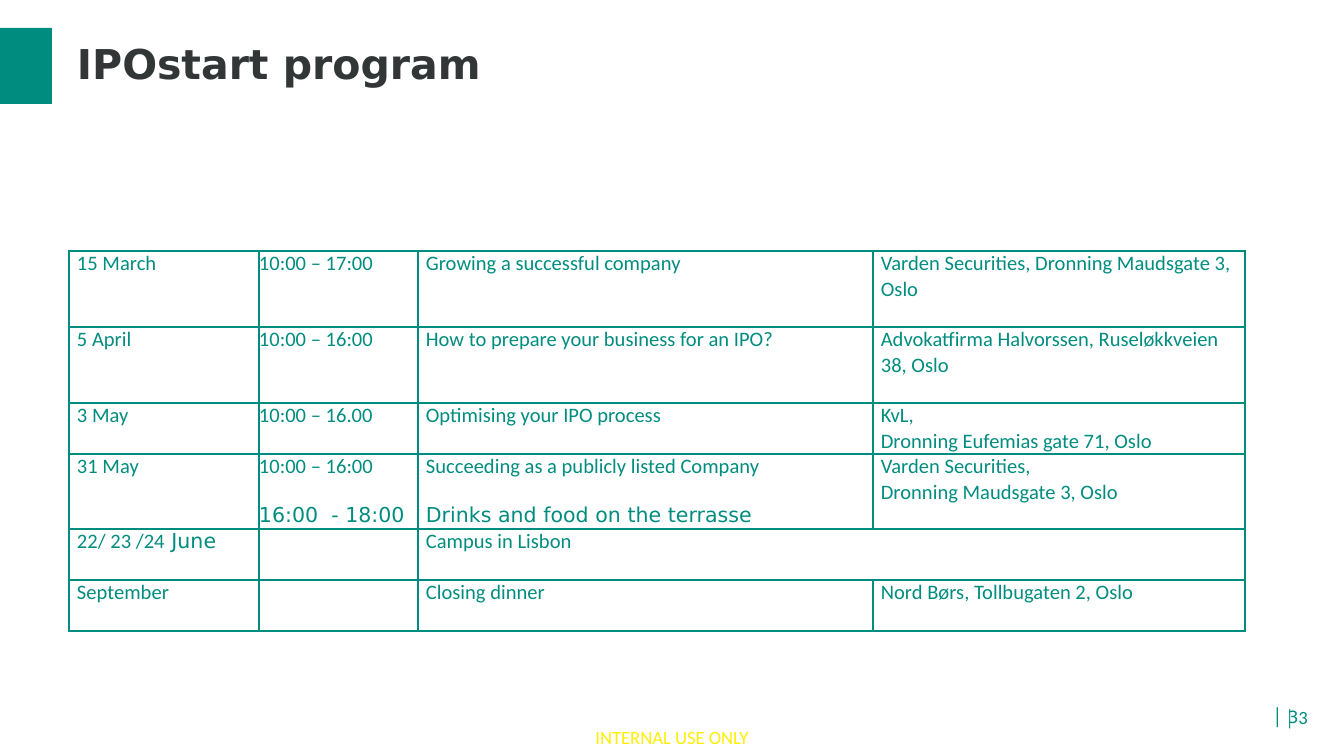
from lxml import etree
from pptx import Presentation
from pptx import util as u
from pptx.dml.color import RGBColor
from pptx.enum import shapes, text
from pptx.oxml.ns import qn

HUES = {"teal": "008D7F", "dark": "323637", "yellow": "FFEF00"}
SANS, WIDE = "Calibri", "DejaVu Sans"


def px(*sizes):
    return [u.Emu(round(n * 914400 / 134.4)) for n in sizes]


def style(font, size, face, hue, bold=False):
    font.size, font.name, font.bold = u.Pt(size), face, bold
    font.color.rgb = RGBColor.from_string(HUES[hue])


prs = Presentation()
prs.slide_width, prs.slide_height = px(1344, 756)
slide = prs.slides.add_slide(prs.slide_layouts[5])

notes = [
    ((1251, 707, 69, 20), "│ 3", 9, WIDE, "teal"),
    ((572, 718, 200, 39), "INTERNAL USE ONLY", 10, SANS, "yellow"),
    ((1262, 706, 69, 23), "│ 3", 10, SANS, "teal"),
]
for area, words, size, face, hue in notes:
    frame = slide.shapes.add_textbox(*px(*area)).text_frame
    frame.word_wrap = True
    frame.margin_left = frame.margin_right = 0
    frame.margin_top = frame.margin_bottom = 0
    if hue == "yellow":
        frame.vertical_anchor = text.MSO_ANCHOR.MIDDLE
    para = frame.paragraphs[0]
    para.text = words
    para.alignment = text.PP_ALIGN.CENTER
    style(para.font, size, face, hue)

block = slide.shapes.add_shape(shapes.MSO_SHAPE.RECTANGLE, *px(0, 28, 52, 76))
block.shadow.inherit = False
block.fill.solid()
block.fill.fore_color.rgb = RGBColor.from_string(HUES["teal"])
block.line.fill.background()

title = slide.shapes.title
title.left, title.top, title.width, title.height = px(77, 45, 1169, 42)
frame = title.text_frame
frame.text = "IPOstart program"
frame.auto_size = text.MSO_AUTO_SIZE.NONE
frame.vertical_anchor = text.MSO_ANCHOR.MIDDLE
frame.margin_left, frame.margin_top, frame.margin_right, frame.margin_bottom = px(0, 7, 13, 7)
para = frame.paragraphs[0]
para.alignment = text.PP_ALIGN.LEFT
para.line_spacing = 0.9
style(para.font, 22, WIDE, "dark", True)

cols = [190, 159, 455, 372]
heights = [76, 76, 51, 75, 51, 51]
events = [
    ["15 March", "10:00 – 17:00", "Growing a successful company",
     "Varden Securities, Dronning Maudsgate 3, Oslo"],
    ["5 April", "10:00 – 16:00", "How to prepare your business for an IPO?",
     "Advokatfirma Halvorssen, Ruseløkkveien 38, Oslo"],
    ["3 May", "10:00 – 16.00", "Optimising your IPO process",
     "KvL,\nDronning Eufemias gate 71, Oslo"],
    ["31 May", "10:00 – 16:00\n16:00  - 18:00",
     "Succeeding as a publicly listed Company\nDrinks and food on the terrasse",
     "Varden Securities,\nDronning Maudsgate 3, Oslo"],
    ["22/ 23 /24", "", "Campus in Lisbon", ""],
    ["September", "", "Closing dinner", "Nord Børs, Tollbugaten 2, Oslo"],
]
area = px(69, 251, sum(cols), sum(heights))
table = slide.shapes.add_table(len(events), len(cols), *area).table
table.first_row = table.horz_banding = False
for col, width in zip(table.columns, px(*cols)):
    col.width = width
for row, height in zip(table.rows, px(*heights)):
    row.height = height

for r, event in enumerate(events):
    for c, words in enumerate(event):
        cell = table.cell(r, c)
        side = px(0 if c == 1 else 8)[0]
        cell.margin_left = cell.margin_right = side
        cell.margin_top = cell.margin_bottom = 0
        props = cell._tc.get_or_add_tcPr()
        for edge in ("lnL", "lnR", "lnT", "lnB"):
            line = etree.SubElement(props, qn("a:" + edge), w=str(u.Pt(1)))
            fill = etree.SubElement(line, qn("a:solidFill"))
            etree.SubElement(fill, qn("a:srgbClr"), val=HUES["teal"])
        cell.fill.background()
        cell.text = words
        for n, para in enumerate(cell.text_frame.paragraphs):
            late = n == 1 and c in (1, 2)
            style(para.font, 11, WIDE if late else SANS, "teal")
            if late:
                para.space_before = u.Pt(13)

june = table.cell(4, 0).text_frame.paragraphs[0].add_run()
june.text = " June"
june.font.name = WIDE
table.cell(4, 2).merge(table.cell(4, 3))

prs.save("out.pptx")
